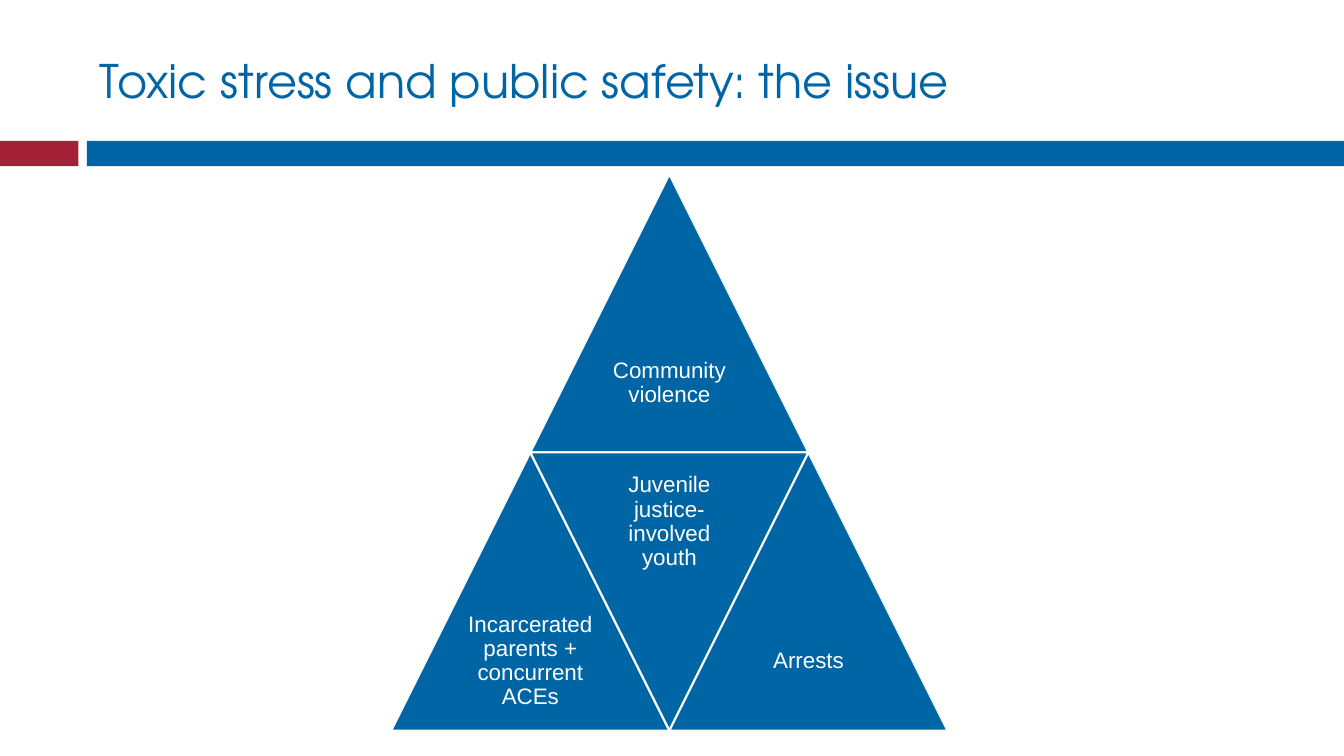
from pptx import Presentation
from pptx.dml.color import RGBColor
from pptx.enum.shapes import MSO_SHAPE as SHAPE
from pptx.enum.text import MSO_ANCHOR as ANCHOR, MSO_AUTO_SIZE as FIT, PP_ALIGN as ALIGN
from pptx.util import Cm, Pt

COLORS = {"blue": "0065A4", "red": "A32136", "white": "FFFFFF"}


def write(tf, text, size, font, color, align, spacing=1.0):
    tf.word_wrap = True
    tf.auto_size = FIT.NONE
    tf.vertical_anchor = ANCHOR.MIDDLE
    p = tf.paragraphs[0]
    p.alignment = align
    p.line_spacing = spacing
    r = p.add_run()
    r.text = text
    r.font.size = Pt(size)
    r.font.name = font
    r.font.color.rgb = RGBColor.from_string(COLORS[color])


def add_filled(shapes, kind, left, top, width, height, color):
    sp = shapes.add_shape(kind, Cm(left), Cm(top), Cm(width), Cm(height))
    sp.shadow.inherit = False
    sp.fill.solid()
    sp.fill.fore_color.rgb = RGBColor.from_string(COLORS[color])
    sp.line.fill.background()
    return sp


prs = Presentation()
prs.slide_width = Cm(33.87)
prs.slide_height = Cm(19.05)
s = prs.slides.add_slide(prs.slide_layouts[5])

for left, width, color in [(0, 1.98, "red"), (2.19, 31.68, "blue")]:
    add_filled(s.shapes, SHAPE.RECTANGLE, left, 3.55, width, 0.64, color)

title = s.shapes.title
title.left, title.top, title.width, title.height = Cm(2.26), Cm(0.64), Cm(30.2), Cm(2.74)
write(title.text_frame, "Toxic stress and public safety: the issue", 33,
      "TeX Gyre Adventor", "blue", ALIGN.LEFT)

side = 7.01
pyramid_left, pyramid_top = 9.86, 4.39
triangles = [
    (1, 0, False, "Community violence"),
    (0, 1, False, "Incarcerated parents + concurrent ACEs"),
    (1, 1, True, "Juvenile justice-involved youth"),
    (2, 1, False, "Arrests"),
]
group = s.shapes.add_group_shape()
for half_steps, row, inverted, label in triangles:
    left = pyramid_left + half_steps * side / 2
    top = pyramid_top + row * side
    sp = add_filled(group.shapes, SHAPE.ISOSCELES_TRIANGLE, left, top, side, side, "blue")
    sp.rotation = 180 if inverted else 0
    sp.line.color.rgb = RGBColor.from_string(COLORS["white"])
    sp.line.width = Pt(1.5)

    label_top = top if inverted else top + side / 2
    box = group.shapes.add_textbox(Cm(left + side / 4), Cm(label_top), Cm(side / 2), Cm(side / 2))
    tf = box.text_frame
    tf.margin_left = tf.margin_right = tf.margin_top = tf.margin_bottom = Cm(0.17)
    write(tf, label, 16, "Arial", "white", ALIGN.CENTER, 0.9)

prs.save("out.pptx")
